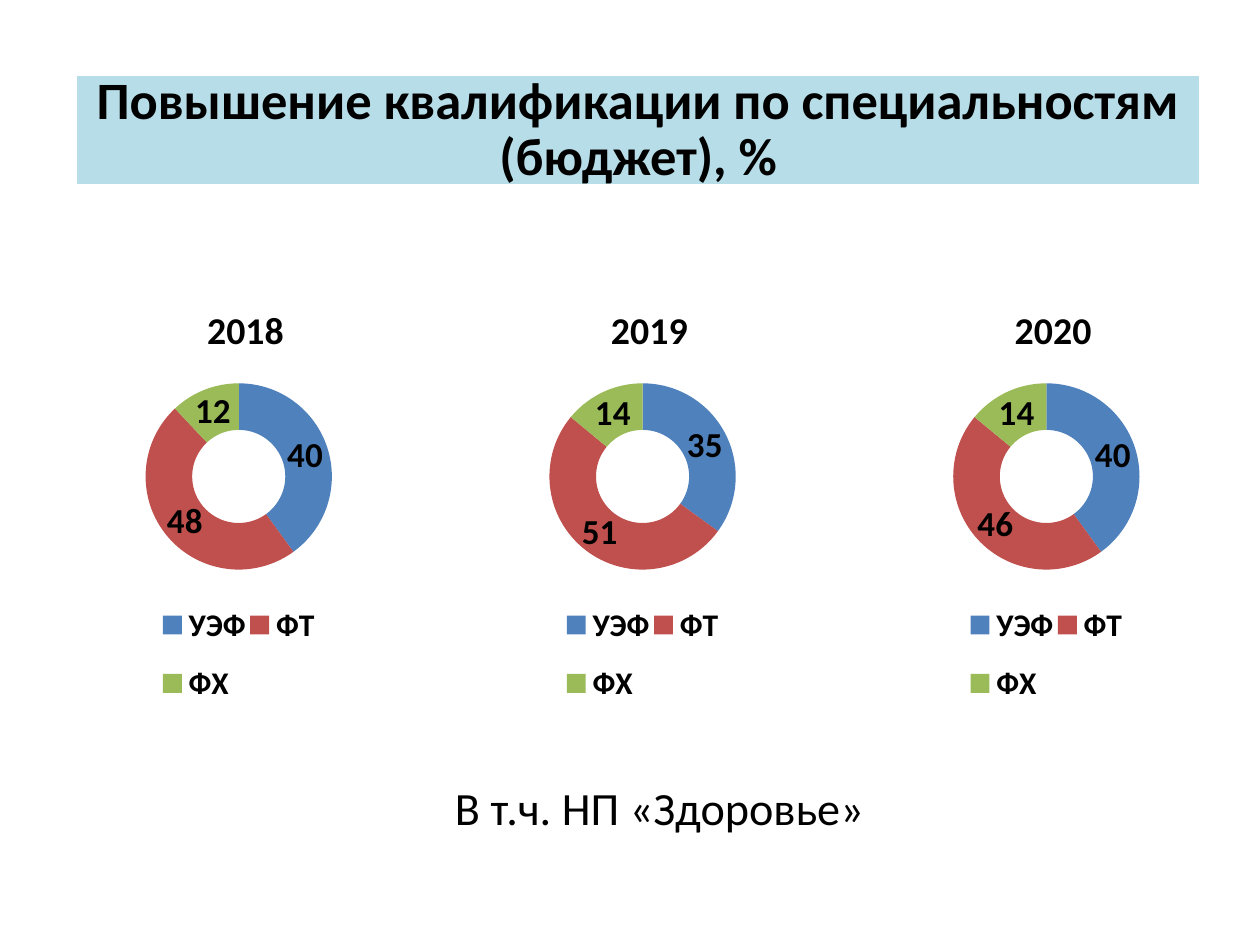
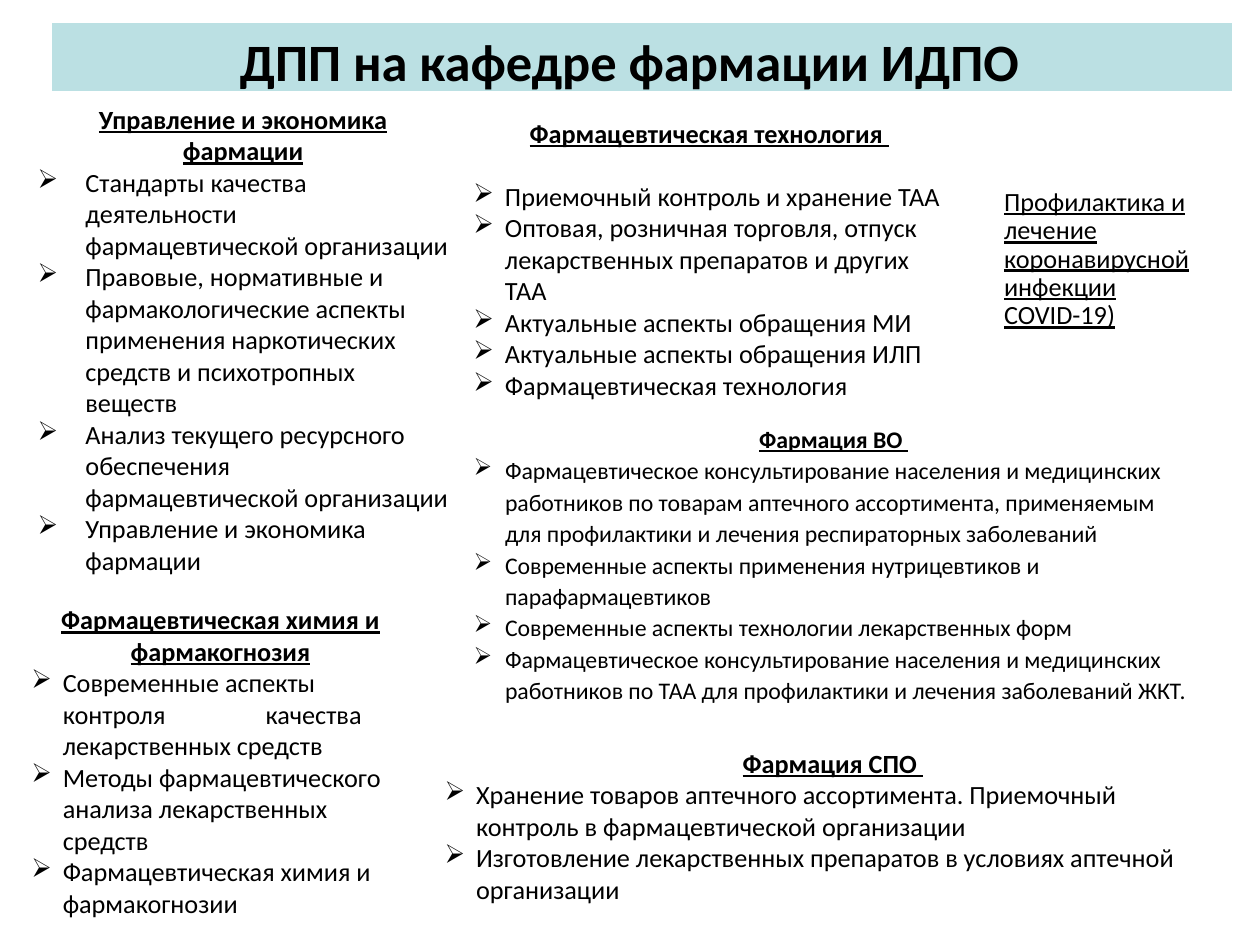
import pptx
import pptx.chart.data
import pptx.dml.color
import pptx.enum.chart
import pptx.enum.shapes
import pptx.enum.text
import pptx.oxml
import pptx.oxml.ns
import pptx.util
from pptx.util import Inches

FONT = "Calibri"
BLACK = "000000"
WHITE = "FFFFFF"
SECTORS = {"УЭФ": "4F81BD", "ФТ": "C0504D", "ФХ": "9BBB59"}
BUDGET_SHARES = {"2018": (40, 48, 12), "2019": (35, 51, 14), "2020": (40, 46, 14)}
CENTER = pptx.enum.text.PP_ALIGN.CENTER
LEFT = pptx.enum.text.PP_ALIGN.LEFT
TOP = pptx.enum.text.MSO_ANCHOR.TOP
MIDDLE = pptx.enum.text.MSO_ANCHOR.MIDDLE

PROGRAMMES = [
    {
        "area": (0.2, 0.77, 3.46, 3.81),
        "heading": "Управление и экономика фармации",
        "indent": 0.38,
        "items": [
            "Стандарты качества деятельности фармацевтической организации",
            "Правовые, нормативные и фармакологические аспекты применения "
            "наркотических средств и психотропных веществ",
            "Анализ текущего ресурсного обеспечения фармацевтической организации",
            "Управление и экономика фармации",
        ],
    },
    {
        "area": (3.66, 0.88, 3.94, 2.36),
        "heading": "Фармацевтическая технология ",
        "heading_gap": 18,
        "items": [
            "Приемочный контроль и хранение ТАА",
            "Оптовая, розничная торговля, отпуск лекарственных препаратов и других ТАА",
            "Актуальные аспекты обращения МИ",
            "Актуальные аспекты обращения ИЛП",
            "Фармацевтическая технология",
        ],
    },
    {
        "area": (0.15, 4.74, 3.2, 2.59),
        "heading": "Фармацевтическая химия и фармакогнозия",
        "tab": 1.86,
        "items": [
            "Современные аспекты контроля\tкачества лекарственных средств",
            "Методы фармацевтического анализа лекарственных средств",
            "Фармацевтическая химия и фармакогнозии",
        ],
    },
    {
        "area": (3.66, 3.3, 5.91, 2.73),
        "heading": "Фармация ВО ",
        "size": 13.6,
        "spacing": 1.1,
        "items": [
            "Фармацевтическое консультирование населения и медицинских работников "
            "по товарам аптечного ассортимента, применяемым для профилактики "
            "и лечения респираторных заболеваний",
            "Современные аспекты применения нутрицевтиков и парафармацевтиков",
            "Современные аспекты технологии лекарственных форм",
            "Фармацевтическое консультирование населения и медицинских работников "
            "по ТАА для профилактики и лечения заболеваний ЖКТ.",
        ],
    },
    {
        "area": (3.43, 5.88, 6.36, 1.26),
        "heading": "Фармация СПО ",
        "items": [
            "Хранение товаров аптечного ассортимента. Приемочный контроль "
            "в фармацевтической организации",
            "Изготовление лекарственных препаратов в условиях аптечной организации",
        ],
    },
]


def color(hex_code):
    """Turn a hex string into a colour."""
    return pptx.dml.color.RGBColor.from_string(hex_code)


def apply(target, **values):
    """Set every given attribute on the target."""
    for name, value in values.items():
        setattr(target, name, value)


def style_font(font, size, **values):
    """Give a font the shared face and colour."""
    apply(font, name=FONT, size=pptx.util.Pt(size), **values)
    font.color.rgb = color(BLACK)


def add_text(paragraph, text, size, align=LEFT, spacing=1.0, **font_values):
    """Write one formatted span into a paragraph."""
    apply(paragraph, alignment=align, line_spacing=spacing)
    span = paragraph.add_run()
    span.text = text
    style_font(span.font, size, **font_values)


def add_bullet(paragraph, indent, tab=None):
    """Give a paragraph an arrow bullet, a hanging indent and a tab stop."""
    properties = paragraph._p.get_or_add_pPr()
    properties.set("marL", str(Inches(indent)))
    properties.set("indent", str(-Inches(indent)))
    namespace = pptx.oxml.ns.nsdecls("a")
    parts = [f'<a:buChar {namespace} char="➢"/>']
    if tab:
        parts.append(f'<a:tabLst {namespace}><a:tab pos="{Inches(tab)}" algn="l"/></a:tabLst>')
    for part in parts:
        properties.append(pptx.oxml.parse_xml(part))


def add_text_box(page, area, anchor=TOP):
    """Add a wrapping text box and return its text frame."""
    frame = page.shapes.add_textbox(*map(Inches, area)).text_frame
    apply(frame, word_wrap=True, vertical_anchor=anchor)
    return frame


def add_panel(page, area, fill, text, size, anchor=MIDDLE, right_inset=0.1, **text_values):
    """Add a filled rectangle with a text."""
    panel = page.shapes.add_shape(
        pptx.enum.shapes.MSO_SHAPE.RECTANGLE, *map(Inches, area))
    panel.shadow.inherit = False
    panel.fill.solid()
    panel.fill.fore_color.rgb = color(fill)
    panel.line.color.rgb = color(WHITE)
    panel.line.width = pptx.util.Pt(0.75)
    frame = panel.text_frame
    apply(frame, word_wrap=True, vertical_anchor=anchor, margin_right=Inches(right_inset))
    add_text(frame.paragraphs[0], text, size, **text_values)


def add_banner(page, area, fill, text, **values):
    """Add the title band of a slide."""
    add_panel(page, area, fill, text, 30, align=CENTER, bold=True, **values)


def add_programme(page, area, heading, items, size=15, indent=0.25, spacing=1.0,
                  heading_gap=0, tab=None):
    """Add an underlined heading with its bulleted courses."""
    frame = add_text_box(page, area)
    first = frame.paragraphs[0]
    add_text(first, heading, size, CENTER, spacing, bold=True, underline=True)
    first.space_after = pptx.util.Pt(heading_gap)
    for item in items:
        paragraph = frame.add_paragraph()
        add_bullet(paragraph, indent, tab)
        add_text(paragraph, item, size, LEFT, spacing)


def place(parent, position, target=None, **fractions):
    """Set the manual layout of a chart part, in fractions of the chart."""
    tag = pptx.oxml.ns.qn("c:layout")
    for old in parent.findall(tag):
        parent.remove(old)
    values = {"layoutTarget": target} if target else {}
    values.update(xMode="edge", yMode="edge", **fractions)
    body = "".join(f'<c:{name} val="{value}"/>' for name, value in values.items())
    parent.insert(position, pptx.oxml.parse_xml(
        f'<c:layout {pptx.oxml.ns.nsdecls("c")}>'
        f"<c:manualLayout>{body}</c:manualLayout></c:layout>"))


def add_doughnut(page, area, year, shares):
    """Add the doughnut chart of one year."""
    data = pptx.chart.data.CategoryChartData()
    data.categories = list(SECTORS)
    data.add_series(year, shares)
    chart = page.shapes.add_chart(
        pptx.enum.chart.XL_CHART_TYPE.DOUGHNUT, *map(Inches, area), data).chart
    style_font(chart.font, 18)

    title = chart.chart_title
    add_text(title.text_frame.paragraphs[0], year, 21.6, CENTER, bold=True)
    place(title._element, 1, x=0.38, y=0.06)

    chart.has_legend = True
    apply(chart.legend, include_in_layout=False,
          position=pptx.enum.chart.XL_LEGEND_POSITION.RIGHT)
    style_font(chart.legend.font, 18, bold=True)
    place(chart.legend._element, 1, x=0.25, y=0.63, w=0.5, h=0.27)

    plot = chart.plots[0]
    apply(plot, vary_by_categories=True, has_data_labels=True)
    apply(plot.data_labels, show_value=True, show_percentage=False)
    style_font(plot.data_labels.font, 20, bold=True)
    for index, fill in enumerate(SECTORS.values()):
        sector = plot.series[0].points[index].format
        sector.fill.solid()
        sector.fill.fore_color.rgb = color(fill)
    place(chart._chartSpace.chart.plotArea, 0, "inner", x=0.21, y=0.21, w=0.58, h=0.41)


def build_budget_slide(page):
    """Show the yearly shares of budget training."""
    for index, (year, shares) in enumerate(BUDGET_SHARES.items()):
        add_doughnut(page, (0.62 + 3.205 * index, 2.11, 2.55, 4.03), year, shares)
    note = add_text_box(page, (3.44, 6.17, 3.59, 0.55), MIDDLE)
    add_text(note.paragraphs[0], "В т.ч. НП «Здоровье»", 26.4, CENTER, 0.8)
    add_banner(page, (0.61, 0.6, 8.91, 0.87), "B7DEE8",
               "Повышение квалификации по специальностям (бюджет), %", spacing=0.9)


def build_programmes_slide(page):
    """List the training programmes of the department."""
    for programme in PROGRAMMES:
        add_programme(page, **programme)
    add_panel(page, (7.87, 1.27, 1.89, 1.58), WHITE,
              "Профилактика и лечение коронавирусной инфекции COVID-19)", 15,
              spacing=0.9, underline=True)
    add_banner(page, (0.41, 0.18, 9.37, 0.55), "BBE0E3",
               "ДПП на кафедре фармации ИДПО", anchor=TOP, right_inset=0.29)


def main():
    """Build the deck and save it."""
    deck = pptx.Presentation()
    apply(deck, slide_width=Inches(10), slide_height=Inches(7.5))
    for build in (build_budget_slide, build_programmes_slide):
        build(deck.slides.add_slide(deck.slide_layouts[6]))
    deck.save("out.pptx")


if __name__ == "__main__":
    main()
